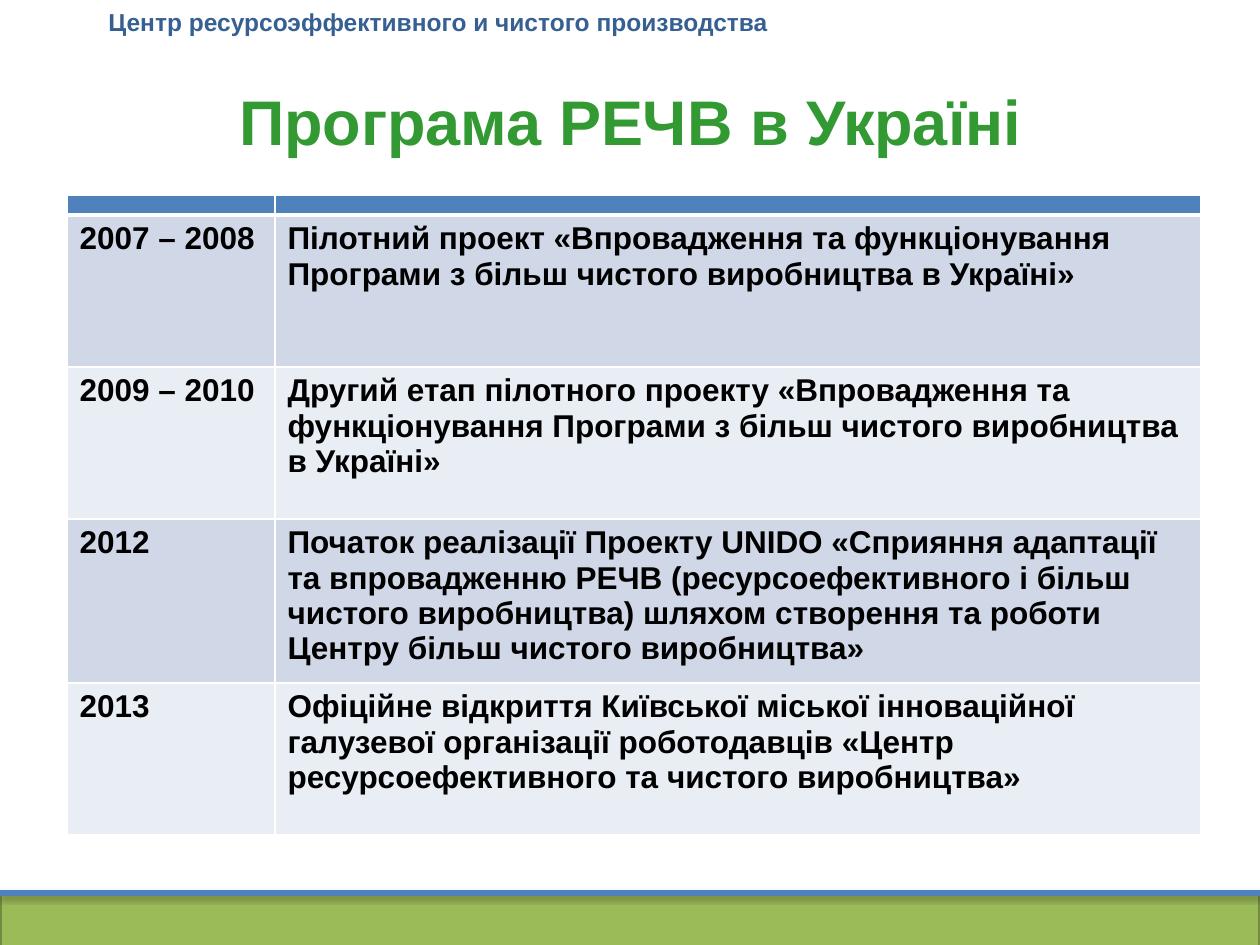
from lxml import etree
from pptx import Presentation
from pptx.dml.color import RGBColor
from pptx.enum.shapes import MSO_CONNECTOR as CONNECTOR, MSO_SHAPE as SHAPE
from pptx.enum.text import MSO_ANCHOR as ANCHOR, PP_ALIGN as ALIGN
from pptx.oxml import parse_xml
from pptx.oxml.ns import nsdecls, qn
from pptx.util import Emu, Pt

PX_PER_INCH = 126
COLUMNS = (208, 926)
ROWS = (20, 152, 152, 164, 152)
HEADER_FILL = "4F81BD"
BAND_FILLS = ("D0D8E8", "E9EDF4")
STAGES = (
    ("2007 – 2008",
     "Пілотний проект «Впровадження та функціонування Програми з більш "
     "чистого виробництва в Україні»"),
    ("2009 – 2010",
     "Другий етап пілотного проекту «Впровадження та функціонування "
     "Програми з більш чистого виробництва в Україні»"),
    ("2012",
     "Початок реалізації Проекту UNIDO «Сприяння адаптації та впровадженню "
     "РЕЧВ (ресурсоефективного і більш чистого виробництва) шляхом створення "
     "та роботи Центру більш чистого виробництва»"),
    ("2013",
     "Офіційне відкриття Київської міської інноваційної галузевої організації "
     "роботодавців «Центр ресурсоефективного та чистого виробництва»"),
)


def px(length):
    return Emu(round(length * 914400 / PX_PER_INCH))


def color(value):
    return RGBColor.from_string(value)


def write(frame, text, size, value, align=ALIGN.LEFT):
    frame.word_wrap = True
    para = frame.paragraphs[0]
    para.alignment = align
    span = para.add_run()
    span.text = text
    span.font.name = "Arial"
    span.font.size = Pt(size)
    span.font.bold = True
    span.font.color.rgb = color(value)


def add_center_name(page):
    box = page.shapes.add_textbox(px(96), px(1), px(1164), px(43))
    write(box.text_frame, "Центр ресурсоэффективного и чистого производства",
          14, "376092")


def add_footer_band(page):
    band = page.shapes.add_shape(SHAPE.RECTANGLE, 0, px(893), px(1260), px(55))
    band.shadow.inherit = False
    band.fill.solid()
    band.fill.fore_color.rgb = color("9BBB59")
    band.line.color.rgb = color("738A42")
    band.line.width = Pt(2)


def add_footer_line(page):
    line = page.shapes.add_connector(
        CONNECTOR.STRAIGHT, 0, px(893), px(1260), px(893))
    line.line.color.rgb = color("4F81BD")
    line.line.width = Pt(3)
    line._element.spPr.append(parse_xml(
        f'<a:effectLst {nsdecls("a")}>'
        '<a:outerShdw blurRad="40000" dist="23000" dir="5400000" rotWithShape="0">'
        '<a:srgbClr val="000000"><a:alpha val="35000"/></a:srgbClr>'
        '</a:outerShdw></a:effectLst>'))


def set_title(page):
    title = page.shapes.title
    title.left, title.top, title.width, title.height = map(px, (64, 45, 1133, 150))
    title.text_frame.vertical_anchor = ANCHOR.MIDDLE
    write(title.text_frame, "Програма РЕЧВ в Україні", 36, "339933", ALIGN.CENTER)


def style_cell(cell, fill, top=1, bottom=1):
    """Give the cell white borders, widths in points, and a solid fill."""
    properties = cell._tc.get_or_add_tcPr()
    for side, width in (("L", 1), ("R", 1), ("T", top), ("B", bottom)):
        border = etree.SubElement(properties, qn(f"a:ln{side}"), w=str(Pt(width)))
        paint = etree.SubElement(border, qn("a:solidFill"))
        etree.SubElement(paint, qn("a:srgbClr"), val="FFFFFF")
    cell.fill.solid()
    cell.fill.fore_color.rgb = color(fill)


def flatten_cell(cell):
    """Let an empty cell be as low as its row."""
    cell.margin_top = cell.margin_bottom = 0
    cell.text_frame.paragraphs[0]._p.get_or_add_endParaRPr().set("sz", "100")


def add_stage_table(page):
    table = page.shapes.add_table(
        len(ROWS), len(COLUMNS), px(67), px(195),
        px(sum(COLUMNS)), px(sum(ROWS))).table
    for column, width in zip(table.columns, COLUMNS):
        column.width = px(width)
    for row, height in zip(table.rows, ROWS):
        row.height = px(height)
    for cell in table.rows[0].cells:
        flatten_cell(cell)
        style_cell(cell, HEADER_FILL, bottom=3)
    for index, stage in enumerate(STAGES):
        for cell, text in zip(table.rows[index + 1].cells, stage):
            write(cell.text_frame, text, 18, "000000")
            style_cell(cell, BAND_FILLS[index % 2], top=1 if index else 3)


def main():
    deck = Presentation()
    deck.slide_width, deck.slide_height = px(1260), px(945)
    page = deck.slides.add_slide(deck.slide_layouts[5])
    add_center_name(page)
    add_footer_band(page)
    add_footer_line(page)
    set_title(page)
    add_stage_table(page)
    deck.save("out.pptx")


if __name__ == "__main__":
    main()
